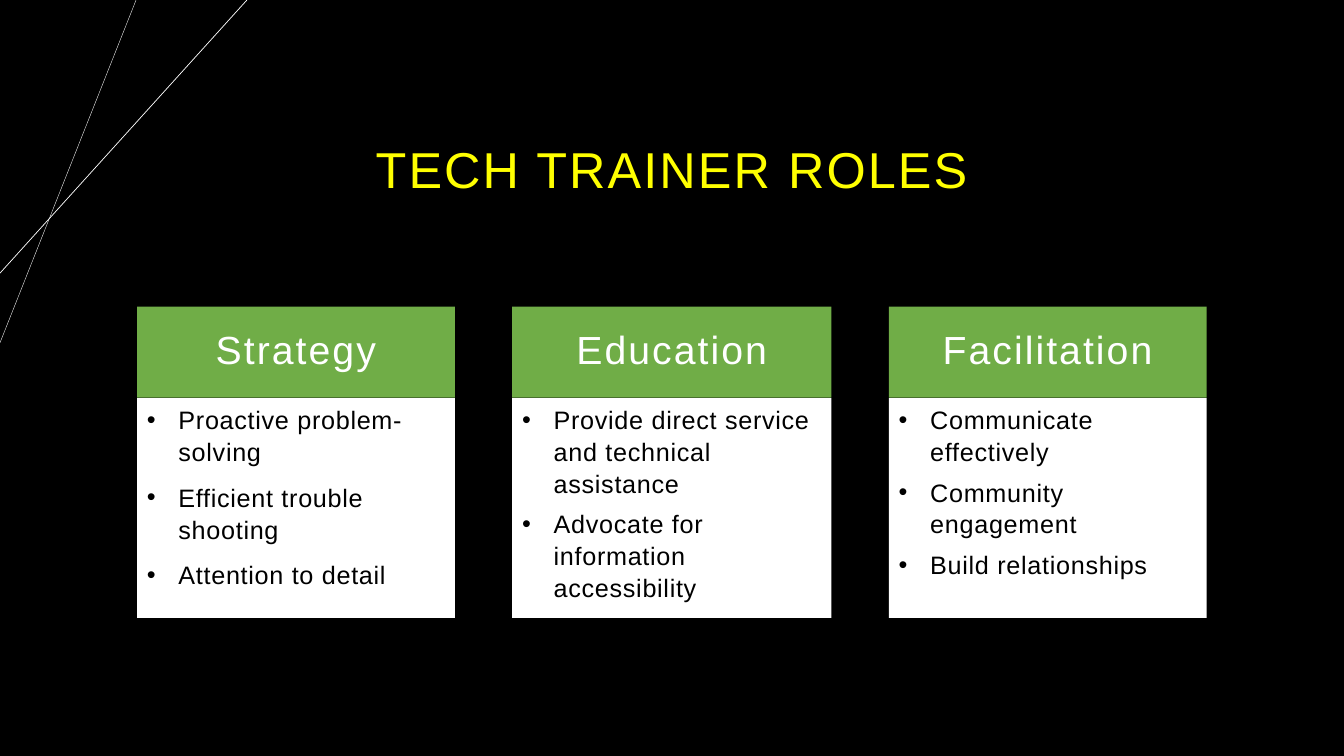
from lxml import etree
from pptx import Presentation
from pptx.dml.color import RGBColor
from pptx.enum import shapes, text
from pptx.oxml.ns import qn
from pptx.util import Pt

# Content
TITLE = "TECH TRAINER ROLES"
ROLES = [  # heading, column width, gap between points, points
    ("Strategy", 227, {"space_before": Pt(10)},
     ["Proactive problem-solving", "Efficient trouble shooting", "Attention to detail"]),
    ("Education", 228, {"space_after": Pt(6.3)},
     ["Provide direct service and technical assistance",
      "Advocate for information accessibility"]),
    ("Facilitation", 227, {"space_after": Pt(6.3)},
     ["Communicate effectively", "Community engagement", "Build relationships"]),
]
RAYS = [((97.2, 0), (0, 244.8), 0.25), ((176.4, 0), (0, 195.1), 0.5)]

# Look
COLORS = {"background": "000000", "title": "FFFF00", "heading": "70AD47",
          "white": "FFFFFF", "black": "000000"}
TITLE_TEXT = {"size": 36, "color": "title", "spacing": 150}
HEADING_TEXT = {"size": 28, "color": "white", "spacing": 150}
POINT_TEXT = {"size": 18, "color": "black", "spacing": 50}
CENTERED = {"alignment": text.PP_ALIGN.CENTER, "line_spacing": 0.9}
LISTED = {"alignment": text.PP_ALIGN.LEFT, "line_spacing": 1.05}

# Layout
LEFT, GAP = 97.9, 41
HEADING_TOP, HEADING_HEIGHT = 219, 65
POINTS_TOP, POINTS_HEIGHT = 284.4, 157
INDENT = 22.5


def rgb(name):
    return RGBColor.from_string(COLORS[name])


def set_attributes(target, values):
    for name, value in values.items():
        setattr(target, name, value)


def write(paragraph, words, look, layout):
    run = paragraph.add_run()
    run.text = words
    set_attributes(run.font, {"name": "Arial", "size": Pt(look["size"])})
    run.font.color.rgb = rgb(look["color"])
    run.font._element.set("spc", str(look["spacing"]))
    set_attributes(paragraph, layout)


def add_bullet(paragraph):
    properties = paragraph._p.get_or_add_pPr()
    properties.set("marL", str(Pt(INDENT)))
    properties.set("indent", str(-Pt(INDENT)))
    etree.SubElement(properties, qn("a:buFont")).set("typeface", "Arial")
    etree.SubElement(properties, qn("a:buChar")).set("char", "•")


def add_panel(left, top, width, height, fill, anchor):
    panel = slide.shapes.add_shape(shapes.MSO_SHAPE.RECTANGLE,
                                   Pt(left), Pt(top), Pt(width), Pt(height))
    panel.shadow.inherit = False
    panel.fill.solid()
    panel.fill.fore_color.rgb = rgb(fill)
    panel.line.fill.background()
    set_attributes(panel.text_frame, {"word_wrap": True, "vertical_anchor": anchor})
    return panel.text_frame


deck = Presentation()
set_attributes(deck, {"slide_width": Pt(960), "slide_height": Pt(540)})
slide = deck.slides.add_slide(deck.slide_layouts[6])
slide.background.fill.solid()
slide.background.fill.fore_color.rgb = rgb("background")

# Corner rays
for start, end, weight in RAYS:
    ray = slide.shapes.add_connector(shapes.MSO_CONNECTOR.STRAIGHT,
                                     *(Pt(value) for value in start + end))
    ray.line.color.rgb = rgb("white")
    ray.line.width = Pt(weight)
    etree.SubElement(ray._element.spPr, qn("a:effectLst"))

# Title
title = slide.shapes.add_textbox(Pt(148.3), Pt(70.6), Pt(663.1), Pt(104.4)).text_frame
set_attributes(title, {"word_wrap": True, "vertical_anchor": text.MSO_ANCHOR.MIDDLE})
write(title.paragraphs[0], TITLE, TITLE_TEXT, CENTERED)

# Role columns
left = LEFT
for role, width, spacing, points in ROLES:
    heading = add_panel(left, HEADING_TOP, width, HEADING_HEIGHT, "heading",
                        text.MSO_ANCHOR.MIDDLE)
    write(heading.paragraphs[0], role, HEADING_TEXT, CENTERED)

    body = add_panel(left, POINTS_TOP, width, POINTS_HEIGHT, "white", text.MSO_ANCHOR.TOP)
    for index, point in enumerate(points):
        paragraph = body.add_paragraph() if index else body.paragraphs[0]
        add_bullet(paragraph)
        write(paragraph, point, POINT_TEXT, {**LISTED, **spacing})
    body.paragraphs[0].space_before = Pt(0)
    left += width + GAP

deck.save("out.pptx")
